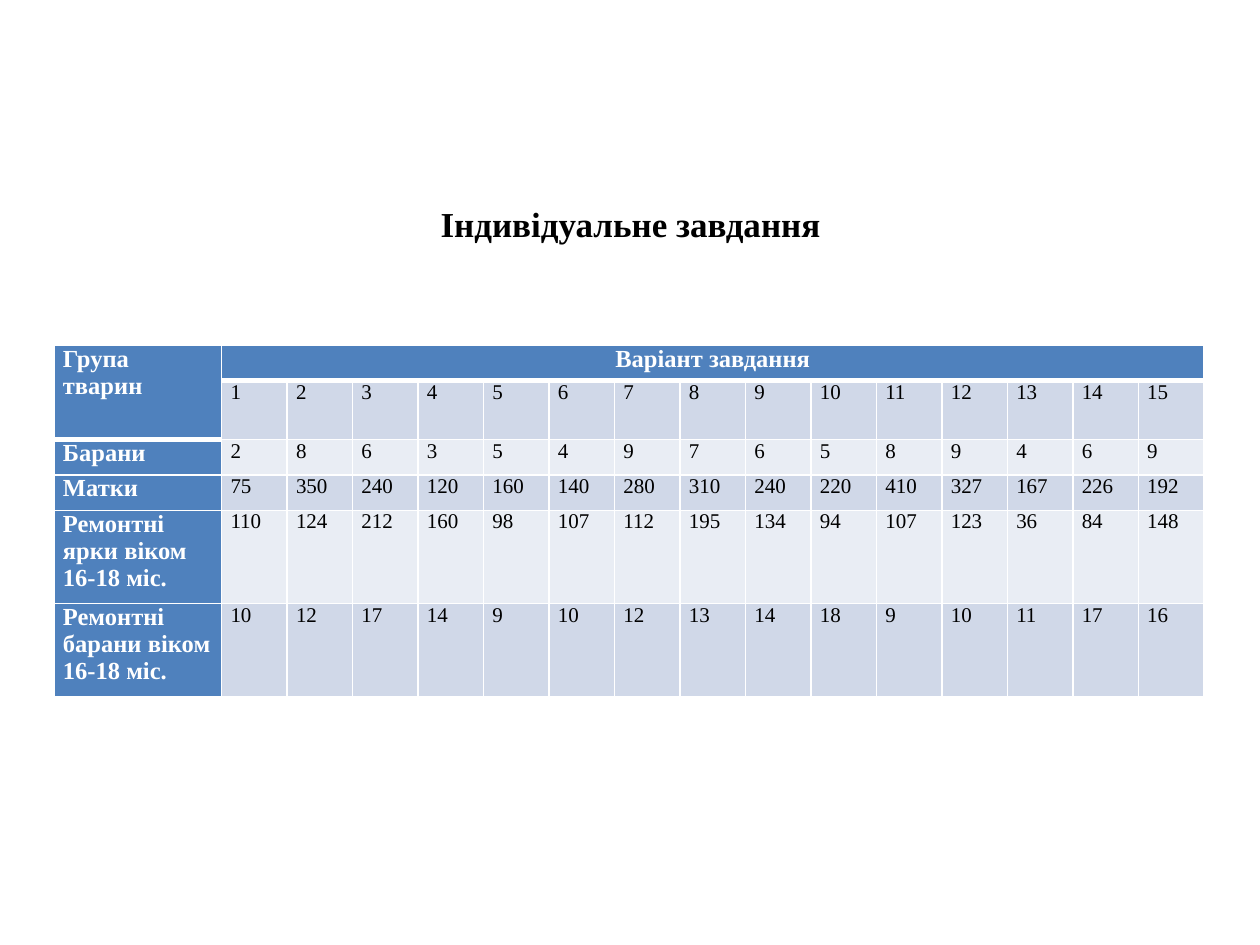
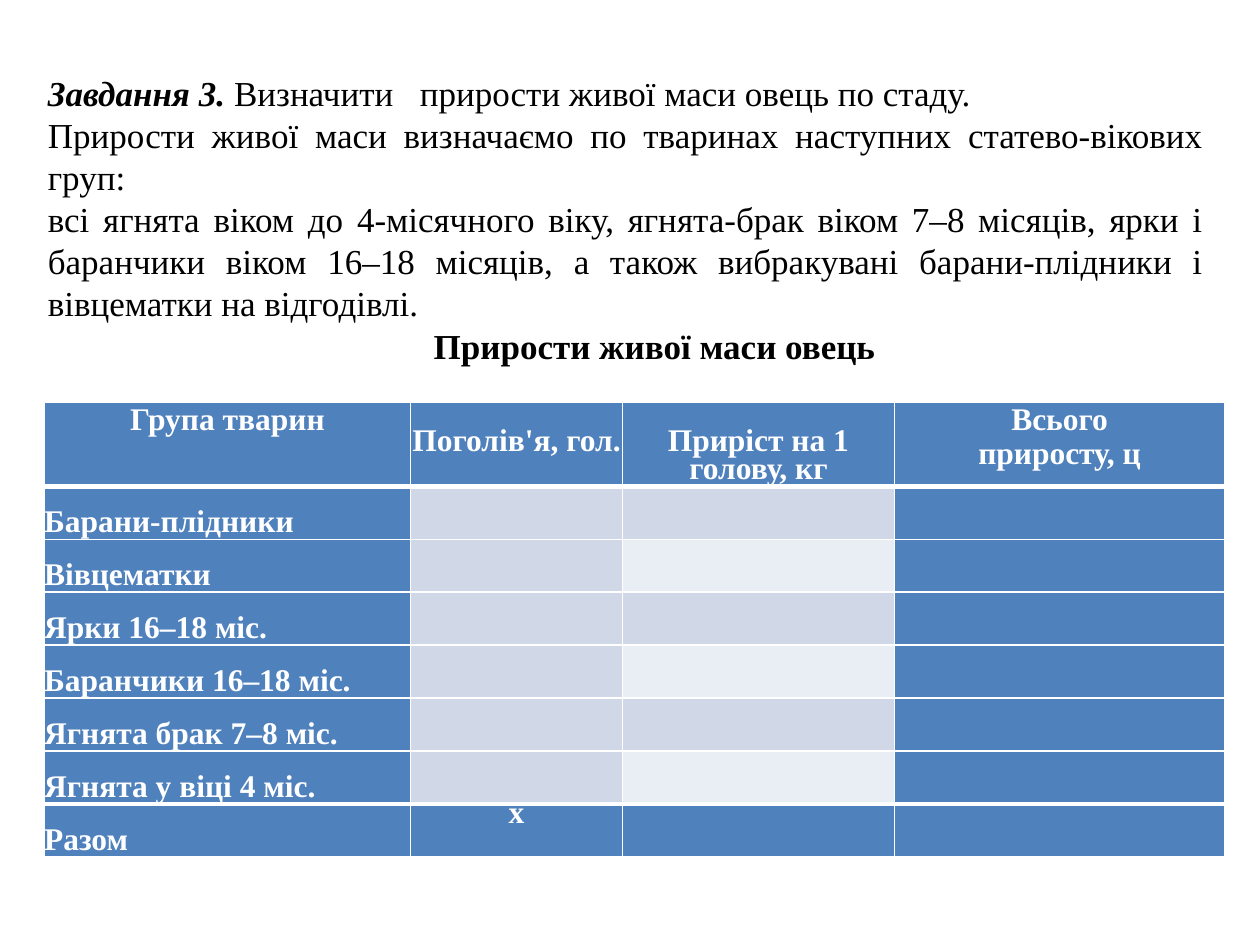
from dataclasses import dataclass, field

from lxml import etree
from pptx import Presentation
from pptx.dml.color import RGBColor
from pptx.enum.text import MSO_ANCHOR, MSO_AUTO_SIZE, PP_ALIGN
from pptx.oxml.ns import qn
from pptx.util import Inches, Pt

LEFT, CENTER, JUSTIFY = PP_ALIGN.LEFT, PP_ALIGN.CENTER, PP_ALIGN.JUSTIFY
TOP, MIDDLE = MSO_ANCHOR.TOP, MSO_ANCHOR.MIDDLE
GROW = MSO_AUTO_SIZE.SHAPE_TO_FIT_TEXT

FONT = "Times New Roman"
WHITE, BLACK = "FFFFFF", "000000"
BLUE, DARK_BAND, LIGHT_BAND = "4F81BD", "D0D8E8", "E9EDF4"
THIN, THICK = 1, 3

HERD_GROUPS = {
    "Барани": [2, 8, 6, 3, 5, 4, 9, 7, 6, 5, 8, 9, 4, 6, 9],
    "Матки": [75, 350, 240, 120, 160, 140, 280, 310, 240, 220, 410, 327, 167, 226, 192],
    "Ремонтні ярки віком 16-18 міс.":
        [110, 124, 212, 160, 98, 107, 112, 195, 134, 94, 107, 123, 36, 84, 148],
    "Ремонтні барани віком 16-18 міс.":
        [10, 12, 17, 14, 9, 10, 12, 13, 14, 18, 9, 10, 11, 17, 16],
}
GAIN_GROUPS = ["Барани-плідники", "Вівцематки", "Ярки 16–18 міс.",
               "Баранчики 16–18 міс.", "Ягнята брак 7–8 міс.", "Ягнята у віці 4 міс."]
TASK_LINES = [
    "Прирости живої маси визначаємо по тваринах наступних статево-вікових груп:",
    "всі ягнята віком до 4-місячного віку, ягнята-брак віком 7–8 місяців, ярки і "
    "баранчики віком 16–18 місяців, а також вибракувані барани-плідники і "
    "вівцематки на відгодівлі.",
]


@dataclass
class CellStyle:
    size: float
    color: str = WHITE
    bold: bool = True
    align: PP_ALIGN = LEFT
    leading: float = 0
    top: float = 0


@dataclass
class Entry:
    text: str
    fill: str
    style: CellStyle


@dataclass
class Grid:
    left: float
    top: float
    columns: list[float]
    heights: list[float]
    rows: list[list[Entry]]
    thick: set[tuple[int, int]]
    side_inset: float = 0
    merges: list[tuple[int, int, int, int]] = field(default_factory=list)


def rgb(value: str) -> RGBColor:
    return RGBColor.from_string(value)


def apply(target, **values) -> None:
    for name, value in values.items():
        setattr(target, name, value)


def format_font(font, size: float, color: str = BLACK, bold: bool = False,
                italic: bool = False) -> None:
    apply(font, name=FONT, size=Pt(size), bold=bold, italic=italic)
    font.color.rgb = rgb(color)


def place(shape, left: float, top: float, width: float, height: float) -> None:
    apply(shape, left=Inches(left), top=Inches(top),
          width=Inches(width), height=Inches(height))


def add_border(cell, side: str, width: float) -> None:
    line = etree.SubElement(cell._tc.get_or_add_tcPr(), qn(f"a:{side}"), w=str(Pt(width)))
    solid = etree.SubElement(line, qn("a:solidFill"))
    etree.SubElement(solid, qn("a:srgbClr"), val=WHITE)


def fill_cell(cell, entry: Entry, side_inset: float, top_line: float,
              bottom_line: float) -> None:
    style = entry.style
    widths = {"lnL": THIN, "lnR": THIN, "lnT": top_line, "lnB": bottom_line}
    for side, width in widths.items():
        add_border(cell, side, width)
    cell.fill.solid()
    cell.fill.fore_color.rgb = rgb(entry.fill)
    apply(cell, margin_left=Inches(side_inset), margin_right=Inches(side_inset),
          margin_top=Inches(style.top), margin_bottom=0, vertical_anchor=TOP)
    cell.text = entry.text
    for para in cell.text_frame.paragraphs:
        para.alignment = style.align
        if style.leading:
            para.line_spacing = Pt(style.leading)
        format_font(para.font, style.size, style.color, style.bold)
        for span in para.runs:
            format_font(span.font, style.size, style.color, style.bold)


def add_grid(page, grid: Grid) -> None:
    frame = page.shapes.add_table(
        len(grid.rows), len(grid.columns), Inches(grid.left), Inches(grid.top),
        Inches(sum(grid.columns)), Inches(sum(grid.heights)))
    table = frame.table
    apply(table, first_row=False, horz_banding=False)
    for column, width in zip(table.columns, grid.columns):
        column.width = Inches(width)
    for row, height in zip(table.rows, grid.heights):
        row.height = Inches(height)
    for r, entries in enumerate(grid.rows):
        for c, entry in enumerate(entries):
            top_line, bottom_line = (THICK if (edge, c) in grid.thick else THIN
                                     for edge in (r, r + 1))
            fill_cell(table.cell(r, c), entry, grid.side_inset, top_line, bottom_line)
    for first_row, first_column, last_row, last_column in grid.merges:
        table.cell(first_row, first_column).merge(table.cell(last_row, last_column))


def set_title(page, text: str, left: float, top: float, width: float,
              indent: float = 0) -> None:
    title = page.shapes.title
    place(title, left, top, width, 0.44)
    box = title.text_frame
    box.text = text
    apply(box, word_wrap=False, auto_size=GROW, vertical_anchor=MIDDLE)
    para = box.paragraphs[0]
    para.alignment = CENTER
    para._p.get_or_add_pPr().set("indent", str(Inches(indent)))
    format_font(para.runs[0].font, 20, bold=True)


def add_span(para, text: str, emphasis: bool = False):
    span = para.add_run()
    span.text = text
    format_font(span.font, 20, bold=emphasis, italic=emphasis)
    return span


def set_task(body) -> None:
    place(body, 0.28, 0.52, 9.37, 2.12)
    box = body.text_frame
    apply(box, word_wrap=True, auto_size=GROW, vertical_anchor=TOP)
    first = box.paragraphs[0]
    add_span(first, "Завдання 3. ", emphasis=True)
    add_span(first, "Визначити")
    wide_space = add_span(first, " ")
    wide_space._r.get_or_add_rPr().set("spc", "1000")
    add_span(first, "прирости живої маси овець по стаду.")
    for line in TASK_LINES:
        add_span(box.add_paragraph(), line)
    for para in box.paragraphs:
        apply(para, alignment=JUSTIFY, space_before=Pt(0), line_spacing=1.0)
        properties = para._p.get_or_add_pPr()
        properties.set("marL", "0")
        properties.set("indent", "0")
        etree.SubElement(properties, qn("a:buNone"))


def herd_grid() -> Grid:
    label = CellStyle(14)
    heading = CellStyle(14, align=CENTER)
    number = CellStyle(12, BLACK, bold=False)
    variants = range(1, 16)
    rows = [[Entry("Група тварин", BLUE, label), Entry("Варіант завдання", BLUE, heading)]
            + [Entry("", BLUE, heading) for _ in variants[1:]]]
    for index, (name, values) in enumerate({"": variants, **HERD_GROUPS}.items()):
        band = LIGHT_BAND if index % 2 else DARK_BAND
        rows.append([Entry(name, BLUE, label)]
                    + [Entry(str(value), band, number) for value in values])
    last = len(variants)
    return Grid(0.43, 2.74, [1.33] + [0.52] * last, [0.28, 0.47, 0.28, 0.28, 0.74, 0.74],
                rows, {(2, 0)} | {(1, column) for column in variants}, 0.07,
                [(0, 0, 1, 0), (0, 1, 0, last)])


def gain_grid() -> Grid:
    heading = CellStyle(18, align=CENTER)
    low_heading = CellStyle(18, align=CENTER, leading=16.1, top=0.22)
    label = CellStyle(18, leading=15.1, top=0.21)
    mark = CellStyle(18, align=CENTER, leading=15.2)
    rows = [[Entry("Група тварин", BLUE, heading),
             Entry("Поголів'я, гол.", BLUE, low_heading),
             Entry("Приріст на 1 голову, кг", BLUE, low_heading),
             Entry("Всього\nприросту, ц", BLUE, heading)]]
    for index, name in enumerate(GAIN_GROUPS):
        band = LIGHT_BAND if index % 2 else DARK_BAND
        rows.append([Entry(name, BLUE, label)]
                    + [Entry("", fill, heading) for fill in (DARK_BAND, band, BLUE)])
    rows.append([Entry("Разом", BLUE, label), Entry("х", BLUE, mark),
                 Entry("", BLUE, heading), Entry("", BLUE, heading)])
    columns = [2.91, 1.68, 2.16, 2.62]
    body_rows = len(rows) - 1
    thick = {(edge, column) for edge in (1, body_rows) for column in range(len(columns))}
    return Grid(0.35, 3.19, columns, [0.67] + [0.42] * body_rows, rows, thick)


def main() -> None:
    deck = Presentation()
    apply(deck, slide_width=Inches(10), slide_height=Inches(7.5))

    herd_page = deck.slides.add_slide(deck.slide_layouts[5])
    add_grid(herd_page, herd_grid())
    set_title(herd_page, "Індивідуальне завдання", 2.87, 1.55, 3.76, indent=0.51)

    gain_page = deck.slides.add_slide(deck.slide_layouts[1])
    set_task(gain_page.placeholders[1])
    add_grid(gain_page, gain_grid())
    set_title(gain_page, "Прирости живої маси овець", 3.33, 2.52, 3.73)

    deck.save("out.pptx")


if __name__ == "__main__":
    main()
